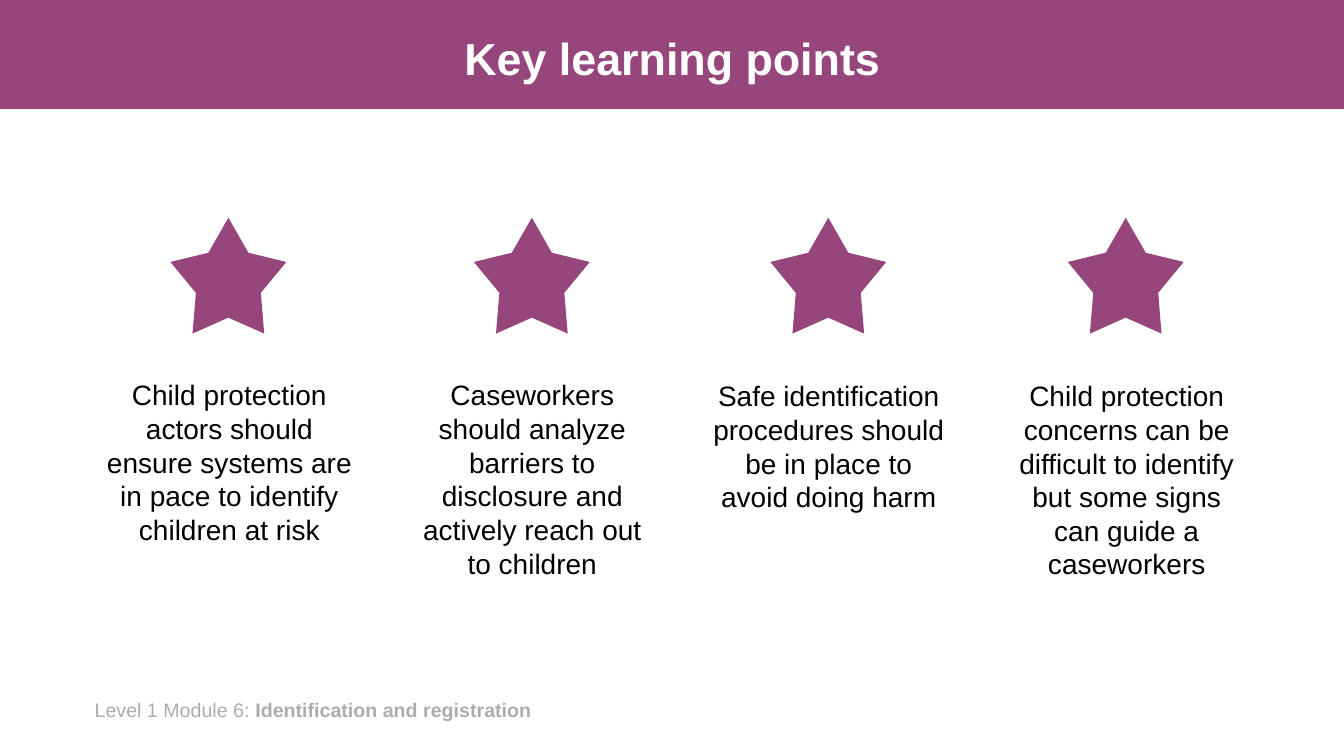
from pptx import Presentation
from pptx.dml.color import RGBColor
from pptx.enum.shapes import MSO_SHAPE
from pptx.enum.text import MSO_ANCHOR, MSO_AUTO_SIZE, PP_ALIGN
from pptx.util import Emu, Pt

PLUM = RGBColor(0x97, 0x46, 0x7C)
WHITE = RGBColor(0xFF, 0xFF, 0xFF)
BLACK = RGBColor(0, 0, 0)
GREY = RGBColor(0xAF, 0xAB, 0xAB)

SCALE = 9144  # EMU per px, 100 px to the inch
WIDE, HIGH = 1333, 750
STAR = 115

# centre, text top, text width, text height, wording
POINTS = [
    (227, 370, 271, 178, "Child protection actors should ensure systems are "
                         "in pace to identify children at risk"),
    (528, 370, 244, 212, "Caseworkers should analyze barriers to disclosure "
                         "and actively reach out to children"),
    (822, 371, 256, 145, "Safe identification procedures should be in place "
                         "to avoid doing harm"),
    (1117, 371, 235, 212, "Child protection concerns can be difficult to "
                          "identify but some signs can guide a caseworkers"),
]


def px(*sizes):
    return [Emu(size * SCALE) for size in sizes]


class Deck:
    """Holds the presentation, its font and the current slide."""

    def __init__(self, face):
        self.face = face
        self.show = Presentation()
        self.show.slide_width, self.show.slide_height = px(WIDE, HIGH)
        self.slide = self.show.slides.add_slide(self.show.slide_layouts[5])

    def style(self, para, size, color, bold=False, align=PP_ALIGN.LEFT):
        para.alignment = align
        font = para.font
        font.name, font.size, font.bold = self.face, Pt(size), bold
        font.color.rgb = color

    def title(self, words, *box):
        head = self.slide.shapes.title
        head.left, head.top, head.width, head.height = px(*box)
        frame = head.text_frame
        frame.text = words
        frame.vertical_anchor = MSO_ANCHOR.MIDDLE
        para = frame.paragraphs[0]
        para.line_spacing = 0.9
        self.style(para, 32, WHITE, True, PP_ALIGN.CENTER)

    def shape(self, kind, *box):
        item = self.slide.shapes.add_shape(kind, *px(*box))
        item.shadow.inherit = False
        item.fill.solid()
        item.fill.fore_color.rgb = PLUM
        item.line.fill.background()
        return item

    def band(self, *box):
        """Add a filled bar behind the title."""
        bar = self.shape(MSO_SHAPE.RECTANGLE, *box)
        self.slide.shapes.title.element.addprevious(bar.element)

    def star(self, *box):
        self.shape(MSO_SHAPE.STAR_5_POINT, *box).adjustments[0] = 0.28

    def text(self, words, *box):
        """Add a text box and return its paragraph."""
        frame = self.slide.shapes.add_textbox(*px(*box)).text_frame
        frame.word_wrap = True
        frame.auto_size = MSO_AUTO_SIZE.SHAPE_TO_FIT_TEXT
        para = frame.paragraphs[0]
        para.add_run().text = words
        return para


def main():
    deck = Deck("Arial")
    deck.title("Key learning points", 92, 13, 1150, 95)
    deck.band(0, 0, WIDE, 108)

    foot = deck.text("Level 1 Module 6: ", 84, 687, 455, 34)
    deck.style(foot, 14, GREY)
    name = foot.add_run()
    name.text = "Identification and registration"
    name.font.bold = True

    for mid, top, width, height, words in POINTS:
        deck.star(mid - 58, 216, STAR, STAR)
        para = deck.text(words, mid - width // 2, top, width, height)
        deck.style(para, 20, BLACK, align=PP_ALIGN.CENTER)

    deck.show.save("out.pptx")


if __name__ == "__main__":
    main()
